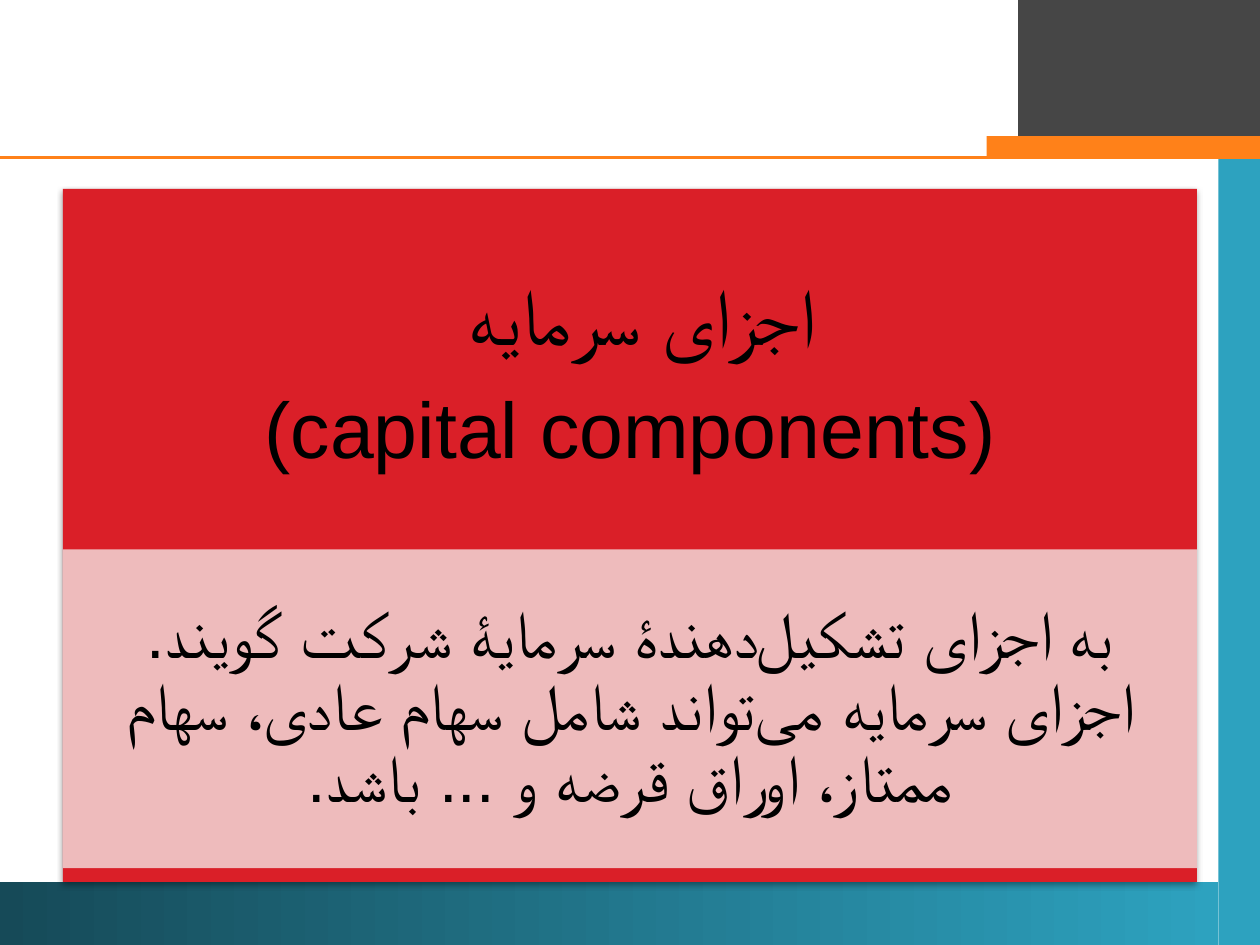
from lxml import etree
from pptx import Presentation
from pptx.dml.color import RGBColor
from pptx.enum.shapes import MSO_CONNECTOR, MSO_SHAPE
from pptx.enum.text import MSO_ANCHOR, PP_ALIGN
from pptx.oxml import parse_xml
from pptx.oxml.ns import qn
from pptx.util import Inches, Pt

TEAL = RGBColor(0x2D, 0xA2, 0xBF)
DEEP_TEAL = RGBColor(0x16, 0x4A, 0x58)
CHARCOAL = RGBColor(0x46, 0x46, 0x46)
ORANGE = RGBColor(0xFF, 0x81, 0x19)
RED = RGBColor(0xDA, 0x1F, 0x28)
PINK = RGBColor(0xF1, 0xCD, 0xCD)
BLACK = RGBColor(0, 0, 0)

HALF_SPACE = chr(0x200C)  # Persian zero-width non-joiner

CARD_SHADOW = """
<a:effectLst xmlns:a="http://schemas.openxmlformats.org/drawingml/2006/main">
  <a:outerShdw blurRad="39370" dist="20320" dir="5400000" rotWithShape="0">
    <a:srgbClr val="000000"><a:alpha val="38000"/></a:srgbClr>
  </a:outerShdw>
</a:effectLst>"""

prs = Presentation()
prs.slide_width, prs.slide_height = Inches(10), Inches(7.5)
slide = prs.slides.add_slide(prs.slide_layouts[6])
shapes = slide.shapes


def add_block(left, top, width, height, color):
    block = shapes.add_shape(MSO_SHAPE.RECTANGLE, Inches(left), Inches(top),
                             Inches(width), Inches(height))
    block.shadow.inherit = False
    block.fill.solid()
    block.fill.fore_color.rgb = color
    block.line.fill.background()
    return block


def write_rtl(frame, lines, size, side_inset, end_inset):
    """Fill a text frame with centred right-to-left paragraphs."""
    frame.word_wrap = True
    frame.vertical_anchor = MSO_ANCHOR.MIDDLE
    frame.margin_left = frame.margin_right = Inches(side_inset)
    frame.margin_top = frame.margin_bottom = Inches(end_inset)
    frame.text = "\n".join(lines)
    for paragraph in frame.paragraphs:
        paragraph.alignment = PP_ALIGN.CENTER
        paragraph.line_spacing = 0.9
        paragraph.space_after = Pt(round(size * 0.35))
        paragraph._p.get_or_add_pPr().set("rtl", "1")
        for run in paragraph.runs:
            run.font.size = Pt(size)
            run.font.name = "Arial"
            run.font.color.rgb = BLACK
            complex_script = etree.SubElement(run._r.get_or_add_rPr(), qn("a:cs"))
            complex_script.set("typeface", "Arial")


# Frame of the page
add_block(9.67, 0.25, 0.33, 7.25, TEAL)
footer = add_block(0, 7, 9.67, 0.5, TEAL)
footer.fill.gradient()
footer.fill.gradient_angle = 0
for stop, color in zip(footer.fill.gradient_stops, (DEEP_TEAL, TEAL)):
    stop.color.rgb = color
add_block(8.08, 0, 1.92, 1.08, CHARCOAL)

rule = shapes.add_connector(MSO_CONNECTOR.STRAIGHT, Inches(10), Inches(1.25),
                            Inches(0), Inches(1.25))
rule.line.color.rgb = ORANGE
rule.line.width = Pt(2.25)
etree.SubElement(rule._element.spPr, qn("a:effectLst"))
add_block(7.83, 1.08, 2.17, 0.17, ORANGE)

# Definition card
card = add_block(0.5, 1.5, 9, 5.5, RED)
card_props = card._element.spPr
card_props.replace(card_props.find(qn("a:effectLst")), parse_xml(CARD_SHADOW))

term = shapes.add_textbox(Inches(0.5), Inches(1.5), Inches(9), Inches(2.97))
write_rtl(term.text_frame, ["اجزای سرمایه ", "(capital components)"], 45, 0.35, 0.35)

definition = add_block(0.5, 4.36, 9, 2.53, PINK)
pink = definition._element.spPr.find(qn("a:solidFill"))[0]
etree.SubElement(pink, qn("a:alpha")).set("val", "90000")
write_rtl(definition.text_frame,
          [f"به اجزای تشکیل{HALF_SPACE}دهندۀ سرمایۀ شرکت گویند. "
           f"اجزای سرمایه می{HALF_SPACE}تواند شامل سهام عادی، سهام ممتاز، "
           "اوراق قرضه و ... باشد."], 38, 0.3, 0.05)
for run in definition.text_frame.paragraphs[0].runs:
    run._r.get_or_add_rPr().set("lang", "fa-IR")

prs.save("out.pptx")
